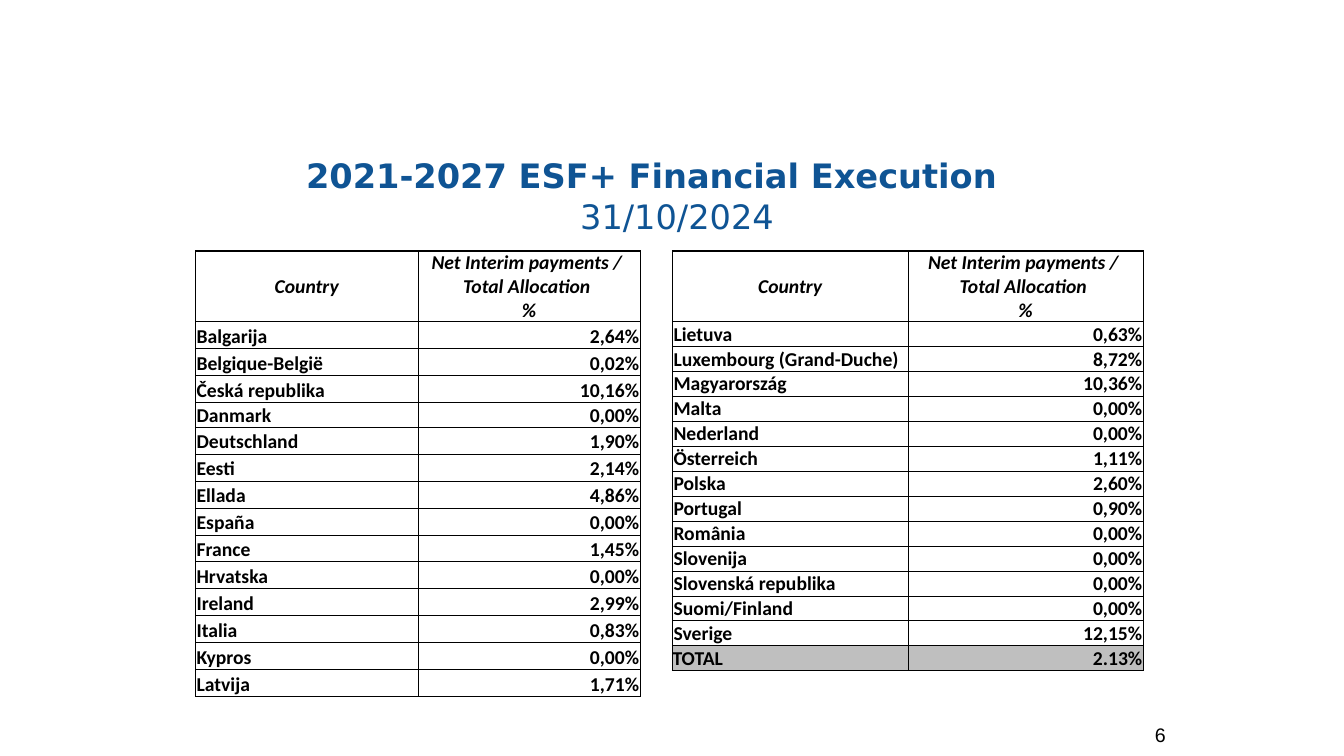
from copy import deepcopy

from lxml.etree import SubElement
from pptx import Presentation
from pptx.dml.color import RGBColor
from pptx.enum.text import MSO_ANCHOR, PP_ALIGN
from pptx.oxml.ns import qn
from pptx.util import Inches, Pt

BLACK = "000000"
BLUE = "0F5494"
GREY = "BFBFBF"
HEADER = ("Country", "Net Interim payments / \nTotal Allocation \n%")
HEADER_HEIGHT = 0.7
LOW_HEIGHT = 0.23

LEFT_COUNTRIES = [
    ("Balgarija", "2,64%"),
    ("Belgique-België", "0,02%"),
    ("Česká republika", "10,16%"),
    ("Danmark", "0,00%"),
    ("Deutschland", "1,90%"),
    ("Eesti", "2,14%"),
    ("Ellada", "4,86%"),
    ("España", "0,00%"),
    ("France", "1,45%"),
    ("Hrvatska", "0,00%"),
    ("Ireland", "2,99%"),
    ("Italia", "0,83%"),
    ("Kypros", "0,00%"),
    ("Latvija", "1,71%"),
]
RIGHT_COUNTRIES = [
    ("Lietuva", "0,63%"),
    ("Luxembourg (Grand-Duche)", "8,72%"),
    ("Magyarország", "10,36%"),
    ("Malta", "0,00%"),
    ("Nederland", "0,00%"),
    ("Österreich", "1,11%"),
    ("Polska", "2,60%"),
    ("Portugal", "0,90%"),
    ("România", "0,00%"),
    ("Slovenija", "0,00%"),
    ("Slovenská republika", "0,00%"),
    ("Suomi/Finland", "0,00%"),
    ("Sverige", "12,15%"),
    ("TOTAL", "2.13%"),
]
LEFT_HEAVY = {(0, 0): "LT", (0, 1): "T"}
RIGHT_HEAVY = {
    (0, 0): "LTB", (0, 1): "TB",
    (1, 0): "TB", (1, 1): "TB",
    (2, 0): "T", (2, 1): "T",
    (14, 0): "LB",
}


def color(code):
    return RGBColor.from_string(code)


def add_text(para, text, font="Calibri", size=14, code=BLACK, bold=False,
             italic=False, align=PP_ALIGN.LEFT):
    para.alignment = align
    lines = text.split("\n")
    for number, line in enumerate(lines, 1):
        span = para.add_run()
        span.text = line
        span.font.name = font
        span.font.size = Pt(size)
        span.font.bold = bold
        span.font.italic = italic
        span.font.color.rgb = color(code)
        if number < len(lines):
            para.add_line_break()
            para._p[-1].append(deepcopy(span._r.get_or_add_rPr()))


def add_box(page, left, top, width, height, margin_top=0.05):
    box = page.shapes.add_textbox(Inches(left), Inches(top), Inches(width), Inches(height))
    box.text_frame.word_wrap = True
    box.text_frame.margin_top = Inches(margin_top)
    return box.text_frame.paragraphs[0]


def add_title(page):
    para = add_box(page, 2.02, 1.47, 9, 1.02, margin_top=0.07)
    properties = para._p.get_or_add_pPr()
    properties.set("marL", str(Inches(0.39)))
    properties.set("indent", str(-Inches(0.39)))
    style = dict(font="DejaVu Sans", size=24, code=BLUE, align=PP_ALIGN.CENTER)
    add_text(para, "2021-2027 ESF+ Financial Execution \n", bold=True, **style)
    add_text(para, "31/10/2024", **style)


def set_borders(cell, heavy):
    properties = cell._tc.get_or_add_tcPr()
    for side in "LRTB":
        line = SubElement(properties, qn(f"a:ln{side}"))
        line.set("w", str(Pt(1 if side in heavy else 0.5)))
        fill = SubElement(line, qn("a:solidFill"))
        SubElement(fill, qn("a:srgbClr")).set("val", BLACK)


def fill_cell(cell, text, row, column, heavy):
    is_header = row == 0
    margin = Inches(0 if is_header else 0.01)
    cell.margin_left = cell.margin_right = cell.margin_top = margin
    cell.margin_bottom = 0
    cell.vertical_anchor = MSO_ANCHOR.MIDDLE if is_header else MSO_ANCHOR.BOTTOM
    set_borders(cell, heavy)
    if text == "TOTAL":
        cell.margin_left = cell.margin_right = cell.margin_top = 0
    body_align = PP_ALIGN.RIGHT if column else PP_ALIGN.LEFT
    add_text(cell.text_frame.paragraphs[0], text, bold=True, italic=is_header,
             align=PP_ALIGN.CENTER if is_header else body_align)


def add_country_table(page, countries, left, width, height, low_row, heavy):
    records = [HEADER, *countries]
    table = page.shapes.add_table(len(records), len(HEADER), Inches(left), Inches(2.49),
                                  Inches(width), Inches(height)).table
    table.first_row = table.horz_banding = False
    row_height = (height - HEADER_HEIGHT - LOW_HEIGHT) / (len(records) - 2)
    special_heights = {0: HEADER_HEIGHT, low_row: LOW_HEIGHT}
    for row, record in enumerate(records):
        table.rows[row].height = Inches(special_heights.get(row, row_height))
        for column, text in enumerate(record):
            cell = table.cell(row, column)
            fill_cell(cell, text, row, column, heavy.get((row, column), ""))
            if record[0] == "TOTAL":
                cell.fill.solid()
                cell.fill.fore_color.rgb = color(GREY)
            else:
                cell.fill.background()


def main():
    deck = Presentation()
    deck.slide_width = Inches(13.33)
    deck.slide_height = Inches(7.5)
    page = deck.slides.add_slide(deck.slide_layouts[6])
    add_title(page)
    add_text(add_box(page, 9.33, 7.12, 2.33, 0.52), "6", font="Arial", align=PP_ALIGN.RIGHT)
    add_country_table(page, LEFT_COUNTRIES, 1.94, 4.41, 4.41, 4, LEFT_HEAVY)
    add_country_table(page, RIGHT_COUNTRIES, 6.67, 4.67, 4.15, 2, RIGHT_HEAVY)
    deck.save("out.pptx")


if __name__ == "__main__":
    main()
